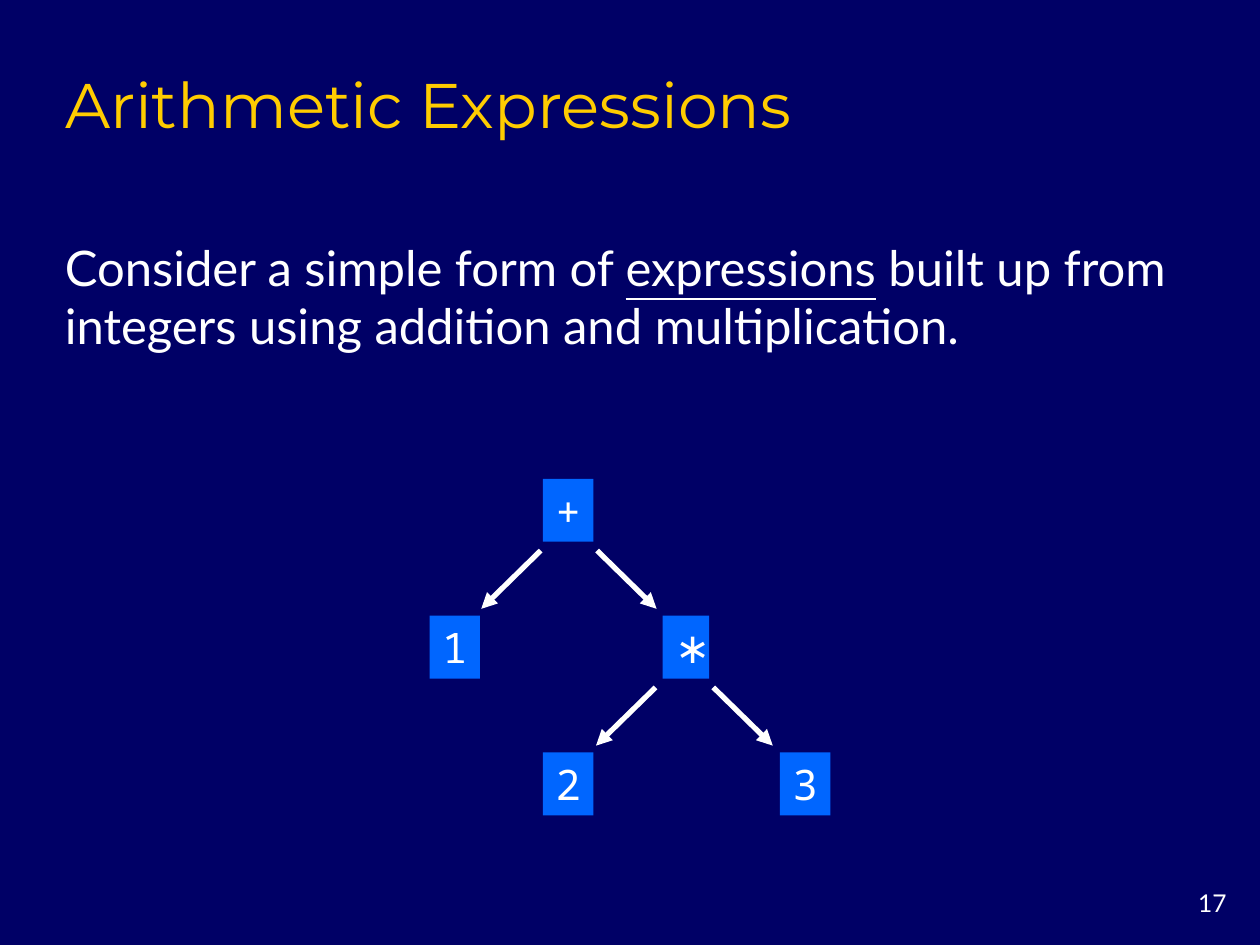
from dataclasses import dataclass

from lxml.etree import SubElement
from pptx import Presentation
from pptx.dml.color import RGBColor
from pptx.enum.shapes import MSO_CONNECTOR as Connector, MSO_SHAPE as Shape
from pptx.enum.text import MSO_ANCHOR as Anchor, MSO_AUTO_SIZE as AutoSize, PP_ALIGN as Align
from pptx.oxml.ns import qn
from pptx.shapes.group import GroupShape
from pptx.util import Pt

COLORS = {"background": "000066", "title": "FFCC00", "text": "FFFFFF", "node": "0066FF"}
BODY_FONT, TITLE_FONT, NODE_FONT = "Lato", "Montserrat", "Noto Sans Mono"

TREE_TOP, LEVEL_GAP, NODE_HEIGHT = 273.6, 78.2, 36
ARROW_WIDTH, ARROW_HEIGHT = 34, 33.3


@dataclass
class Node:
    label: str
    left: float
    level: int
    width: float = 28.8


@dataclass
class Arrow:
    left: float  # start of the arrow
    level: int  # level of the parent node
    direction: int  # -1 to the left child, 1 to the right child


NODES = [
    Node("1", 245.5, 1),
    Node("+", 310.3, 0),
    Node("∗", 378.7, 1, 26.6),
    Node("3", 445.7, 2),
    Node("2", 310.3, 2),
]
ARROWS = [Arrow(309, 0, -1), Arrow(374.6, 1, -1), Arrow(341.2, 0, 1), Arrow(407.6, 1, 1)]


def color(name: str) -> RGBColor:
    return RGBColor.from_string(COLORS[name])


def style(paragraph, font_name: str, size: float, color_name: str = "text") -> None:
    paragraph.font.name = font_name
    paragraph.font.size = Pt(size)
    paragraph.font.color.rgb = color(color_name)


def level_top(level: int) -> float:
    return TREE_TOP + level * LEVEL_GAP


def draw_node(group: GroupShape, node: Node) -> None:
    shape = group.shapes.add_shape(
        Shape.RECTANGLE, Pt(node.left), Pt(level_top(node.level)), Pt(node.width), Pt(NODE_HEIGHT))
    shape.shadow.inherit = False
    shape.fill.solid()
    shape.fill.fore_color.rgb = color("node")
    shape.line.fill.background()
    frame = shape.text_frame
    frame.word_wrap = False
    frame.auto_size = AutoSize.SHAPE_TO_FIT_TEXT
    frame.vertical_anchor = Anchor.MIDDLE
    paragraph = frame.paragraphs[0]
    paragraph.text = node.label
    paragraph.alignment = Align.CENTER
    style(paragraph, NODE_FONT, 24)


def draw_arrow(group: GroupShape, arrow: Arrow) -> None:
    top = level_top(arrow.level) + NODE_HEIGHT + 5
    connector = group.shapes.add_connector(
        Connector.STRAIGHT, Pt(arrow.left), Pt(top),
        Pt(arrow.left + arrow.direction * ARROW_WIDTH), Pt(top + ARROW_HEIGHT))
    connector.line.color.rgb = color("text")
    connector.line.width = Pt(3)
    SubElement(connector.line._get_or_add_ln(), qn("a:tailEnd"), type="triangle")
    SubElement(connector._element.spPr, qn("a:effectLst"))


def main() -> None:
    presentation = Presentation()
    presentation.slide_width, presentation.slide_height = Pt(720), Pt(540)
    slide = presentation.slides.add_slide(presentation.slide_layouts[5])
    slide.background.fill.solid()
    slide.background.fill.fore_color.rgb = color("background")

    # Title
    title = slide.shapes.title
    title.left, title.top, title.width, title.height = Pt(30), Pt(30), Pt(612), Pt(54)
    title.text_frame.vertical_anchor = Anchor.BOTTOM
    paragraph = title.text_frame.paragraphs[0]
    paragraph.text = "Arithmetic Expressions"
    paragraph.alignment = Align.LEFT
    style(paragraph, TITLE_FONT, 36, "title")

    # Introduction
    introduction = slide.shapes.add_textbox(Pt(30), Pt(132), Pt(655), Pt(74.2))
    frame = introduction.text_frame
    frame.word_wrap = True
    frame.auto_size = AutoSize.SHAPE_TO_FIT_TEXT
    frame.vertical_anchor = Anchor.MIDDLE
    paragraph = frame.paragraphs[0]
    style(paragraph, BODY_FONT, 28)
    paragraph.add_run().text = "Consider a simple form of "
    term = paragraph.add_run()
    term.text = "expressions"
    term.font.underline = True
    paragraph.add_run().text = " built up from integers using addition and multiplication."

    # Expression tree
    tree = slide.shapes.add_group_shape()
    for node in NODES:
        draw_node(tree, node)
    for arrow in ARROWS:
        draw_arrow(tree, arrow)

    # Page number
    page_number = slide.shapes.add_textbox(Pt(660), Pt(504), Pt(48), Pt(24))
    page_number.text_frame.word_wrap = True
    paragraph = page_number.text_frame.paragraphs[0]
    paragraph.text = "17"
    paragraph.alignment = Align.RIGHT
    style(paragraph, BODY_FONT, 14)

    presentation.save("out.pptx")


if __name__ == "__main__":
    main()
